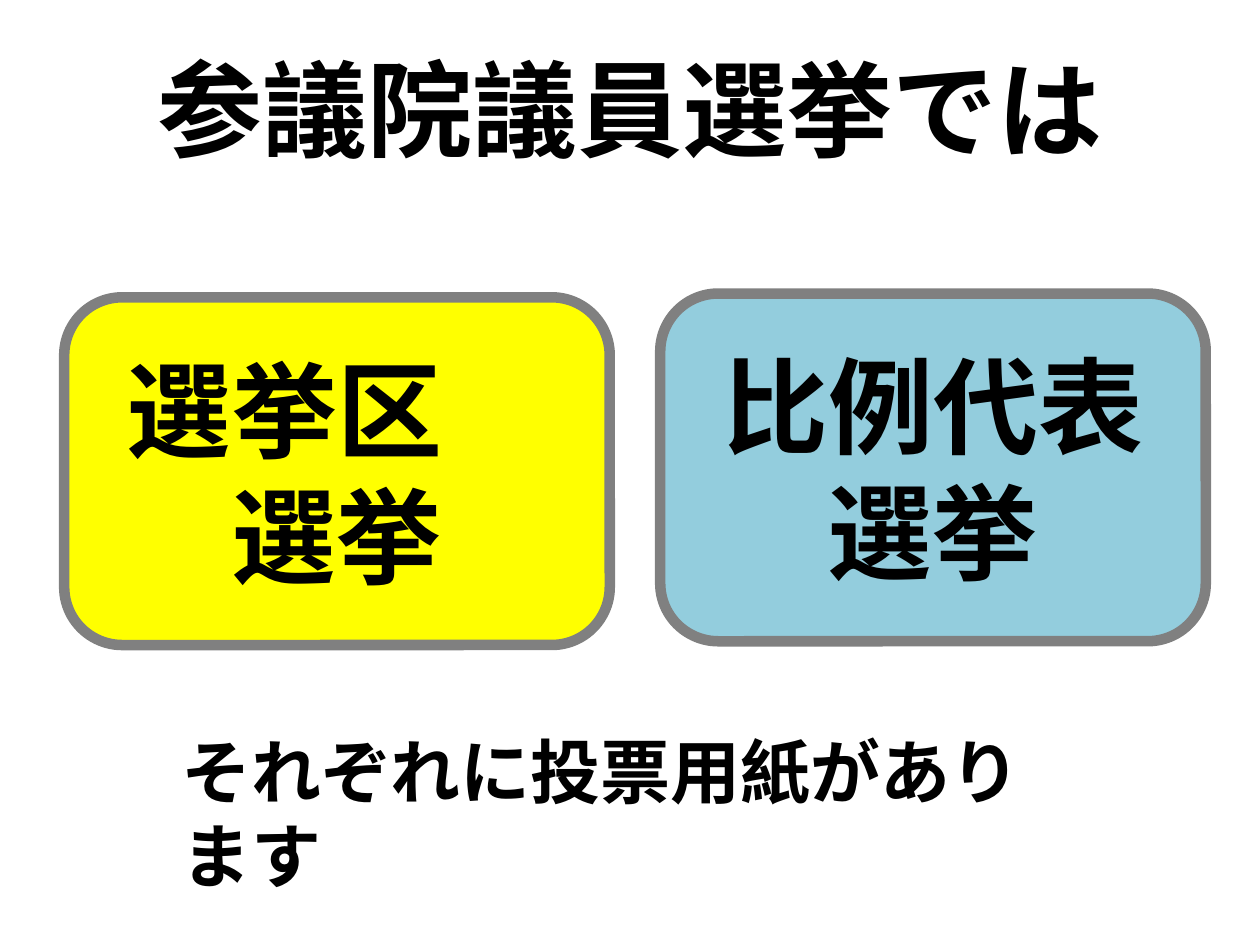
from pptx import Presentation
from pptx.dml.color import RGBColor
from pptx.enum import shapes, text
from pptx.oxml.ns import qn
from pptx.util import Inches, Pt
from lxml import etree

COLORS = {
    "text": "000000",
    "border": "808080",
    "district": "FFFF00",
    "proportional": "93CDDD",
}
FONT = "Noto Sans CJK JP"


def color(name):
    return RGBColor.from_string(COLORS[name])


def write(frame, wording, size, align, anchor):
    """Fill a text frame with one bold paragraph, in Latin and Japanese font alike."""
    frame.word_wrap = True
    frame.vertical_anchor = anchor
    paragraph = frame.paragraphs[0]
    paragraph.text = wording
    paragraph.alignment = align
    font = paragraph.font
    font.name, font.size, font.bold = FONT, Pt(size), True
    font.color.rgb = color("text")
    latin = paragraph._p.pPr.find(qn("a:defRPr")).find(qn("a:latin"))
    east_asian = etree.Element(qn("a:ea"), typeface=FONT)
    latin.addnext(east_asian)
    for run in paragraph.runs:
        properties = run._r.get_or_add_rPr()
        etree.SubElement(properties, qn("a:ea"), typeface=FONT)


def add_caption(slide, box, wording, size, align):
    caption = slide.shapes.add_textbox(*map(Inches, box))
    write(caption.text_frame, wording, size, align, text.MSO_ANCHOR.TOP)
    return caption


def add_election_card(slide, box, wording, fill):
    card = slide.shapes.add_shape(
        shapes.MSO_SHAPE.ROUNDED_RECTANGLE, *map(Inches, box))
    card.shadow.inherit = False
    card.fill.solid()
    card.fill.fore_color.rgb = color(fill)
    card.line.color.rgb = color("border")
    card.line.width = Pt(6)
    write(card.text_frame, wording, 60, text.PP_ALIGN.CENTER, text.MSO_ANCHOR.MIDDLE)


def main():
    deck = Presentation()
    deck.slide_width, deck.slide_height = Inches(10), Inches(7.5)
    slide = deck.slides.add_slide(deck.slide_layouts[6])

    add_caption(slide, (0.5, 0.3, 9, 1.25), "参議院議員選挙では", 60,
                text.PP_ALIGN.CENTER)
    add_election_card(slide, (0.51, 2.36, 4.33, 2.76), "選挙区　選挙", "district")
    add_election_card(slide, (5.24, 2.33, 4.33, 2.76), "比例代表選挙", "proportional")
    ballot_note = add_caption(slide, (1.34, 5.73, 7.33, 0.77),
                              "それぞれに投票用紙があります", 40, text.PP_ALIGN.LEFT)
    ballot_note.text_frame.auto_size = text.MSO_AUTO_SIZE.SHAPE_TO_FIT_TEXT

    deck.save("out.pptx")


if __name__ == "__main__":
    main()
